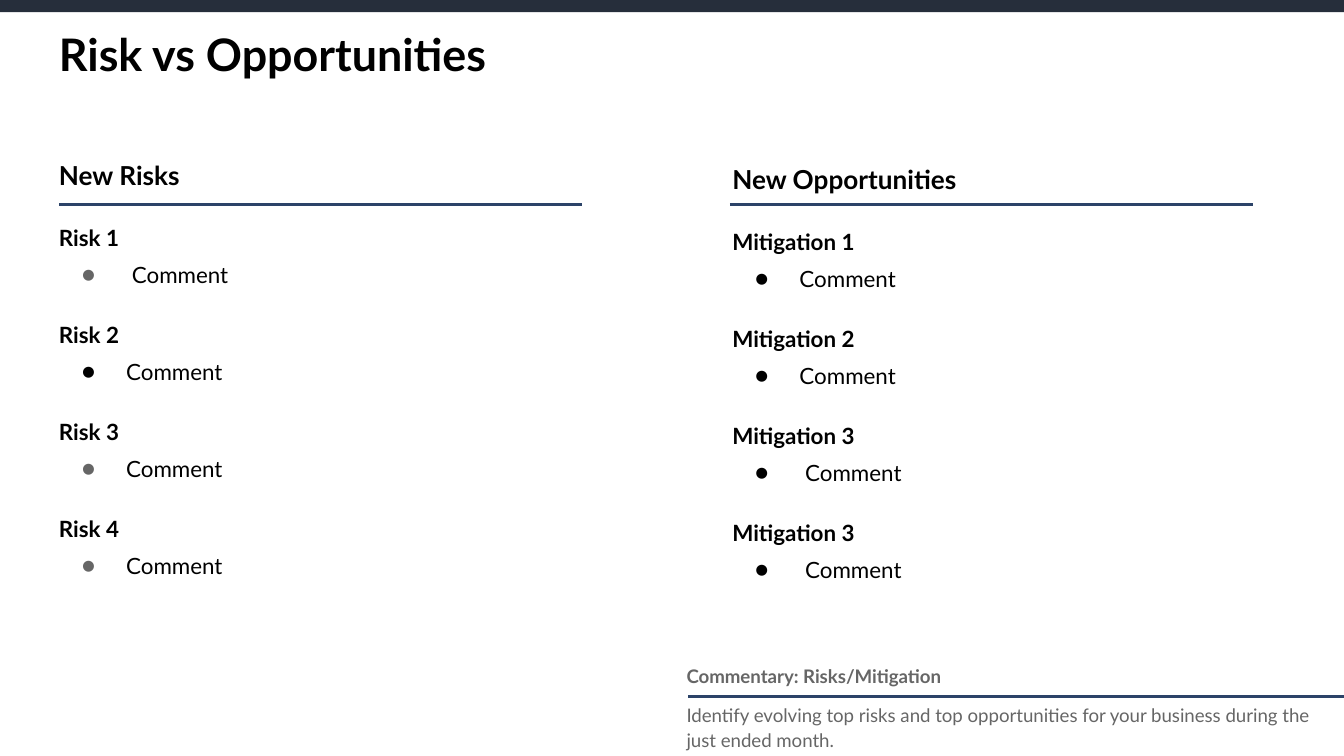
from lxml import etree
from pptx import Presentation
from pptx.dml.color import RGBColor
from pptx.enum.shapes import MSO_CONNECTOR, MSO_SHAPE
from pptx.enum.text import MSO_AUTO_SIZE
from pptx.oxml.ns import qn
from pptx.util import Inches, Pt

STRAIGHT = MSO_CONNECTOR.STRAIGHT
RECT = MSO_SHAPE.RECTANGLE
GROW = MSO_AUTO_SIZE.SHAPE_TO_FIT_TEXT
FONT = "Lato"
COLORS = {"bar": "262E3B", "rule": "2C4368", "ink": "000000", "gray": "666666"}
RISKS = [
    ("Risk 1", " Comment", "gray"),
    ("Risk 2", "Comment", "ink"),
    ("Risk 3", "Comment", "gray"),
    ("Risk 4", "Comment", "gray"),
]
GAINS = [
    ("Mitigation 1", "Comment", "ink"),
    ("Mitigation 2", "Comment", "ink"),
    ("Mitigation 3", " Comment", "ink"),
    ("Mitigation 3", " Comment", "ink"),
]


def color(name):
    """Return the named colour."""
    return RGBColor.from_string(COLORS[name])


def add_box(slide, left, top, width, height):
    """Add a wrapping text box and return its frame."""
    box = slide.shapes.add_textbox(*map(Inches, (left, top, width, height)))
    frame = box.text_frame
    frame.word_wrap = True
    frame.margin_left = frame.margin_right = Inches(0.1)
    frame.margin_top = frame.margin_bottom = Inches(0.1)
    return frame


def add_text(frame, text, size=12, bold=False, ink="ink", space=1.0, before=0, dot=None):
    """Write one paragraph, with a bullet if dot names its colour."""
    first = frame.paragraphs[0]
    para = frame.add_paragraph() if first.runs else first
    para.line_spacing = space
    para.space_before = Pt(before)
    run = para.add_run()
    run.text = text
    font = run.font
    font.name, font.size, font.bold = FONT, Pt(size), bold
    font.color.rgb = color(ink)
    if dot:
        props = para._p.get_or_add_pPr()
        props.set("marL", str(Inches(0.5)))
        props.set("indent", str(Inches(-0.33)))
        fill = etree.SubElement(props, qn("a:buClr"))
        etree.SubElement(fill, qn("a:srgbClr"), val=COLORS[dot])
        etree.SubElement(props, qn("a:buFont"), typeface=FONT)
        etree.SubElement(props, qn("a:buChar"), char="●")


def add_rule(slide, left, top, width):
    """Draw a horizontal rule."""
    ends = map(Inches, (left, top, left + width, top))
    rule = slide.shapes.add_connector(STRAIGHT, *ends)
    rule.line.color.rgb = color("rule")
    rule.line.width = Pt(1.5)
    etree.SubElement(rule._element.spPr, qn("a:effectLst"))


def add_head(slide, left, top, width, height):
    """Draw the top bar and the title below it."""
    bar = slide.shapes.add_shape(RECT, *map(Inches, (left, top, width, 0.09)))
    bar.shadow.inherit = False
    bar.fill.solid()
    bar.fill.fore_color.rgb = color("bar")
    bar.line.fill.background()
    frame = add_box(slide, left + 0.34, top + 0.1, width - 0.68, height - 0.1)
    add_text(frame, "Risk vs Opportunities", size=24, bold=True)


def add_list(slide, left, top, width, height, title, items, rule):
    """Write a titled list of items with comments, ruled at the given offset."""
    frame = add_box(slide, left, top, width, height)
    add_text(frame, title, size=14, bold=True, space=1.15)
    for name, note, dot in items:
        add_text(frame, name, bold=True, space=1.14, before=16)
        add_text(frame, note, space=1.15, before=3, dot=dot)
    shift_x, shift_y = rule
    add_rule(slide, left + shift_x, top + shift_y, 3.89)


def add_note(slide, left, top, width, height):
    """Write the commentary with its heading and rule."""
    head = add_box(slide, left, top, 2.52, 0.32)
    head.auto_size = GROW
    add_text(head, "Commentary: Risks/Mitigation", size=10, bold=True, ink="gray")
    body = add_box(slide, left, top + 0.25, width - 0.07, height - 0.25)
    add_text(
        body,
        "Identify evolving top risks and top opportunities for your business "
        "during the just ended month.",
        size=10, ink="gray", space=1.15,
    )
    add_rule(slide, left + 0.11, top + 0.32, width - 0.11)


def main():
    """Build and save the slide."""
    deck = Presentation()
    deck.slide_width = Inches(10)
    deck.slide_height = deck.slide_width * 9 // 16
    slide = deck.slides.add_slide(deck.slide_layouts[6])
    add_head(slide, 0, 0, 10, 0.69)
    add_list(slide, 0.34, 1.05, 4.38, 4.55, "New Risks", RISKS, (0.1, 0.47))
    add_list(slide, 5.35, 1.08, 4.38, 4.38, "New Opportunities", GAINS, (0.08, 0.44))
    add_note(slide, 5.01, 4.86, 4.99, 0.73)
    deck.save("out.pptx")


if __name__ == "__main__":
    main()
